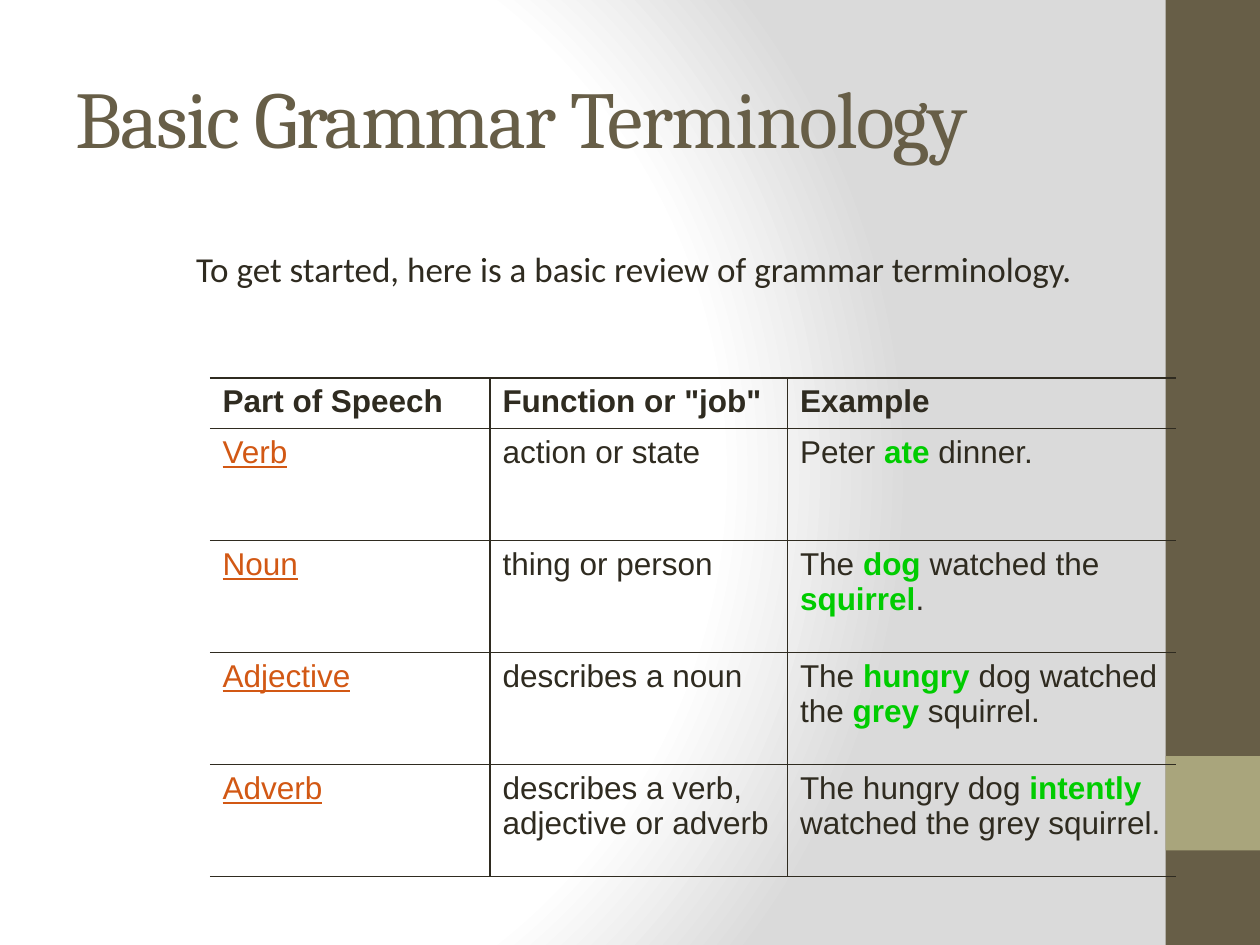
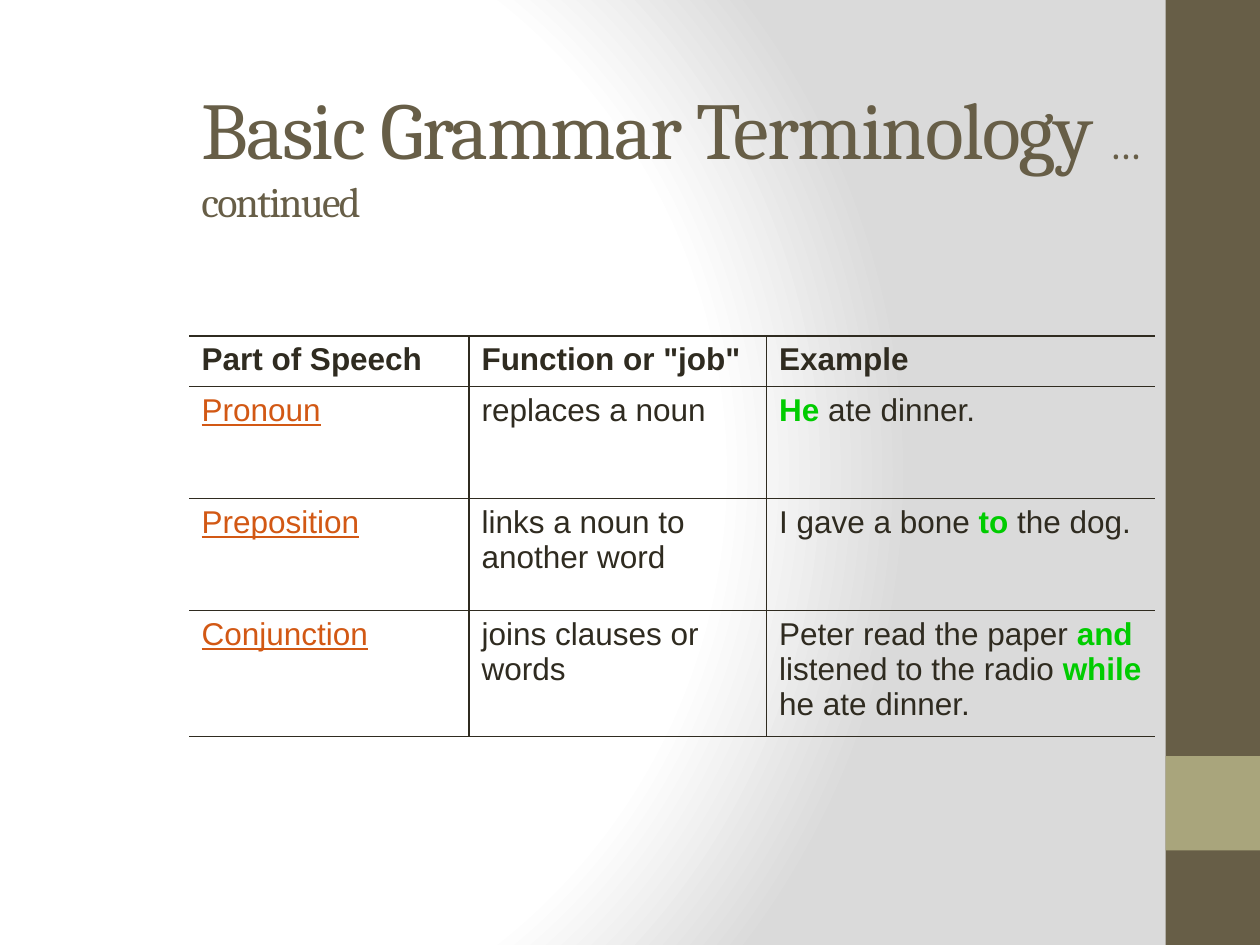
from lxml import etree
from pptx import Presentation
from pptx.dml.color import RGBColor
from pptx.enum import shapes, text
from pptx.oxml.ns import qn
from pptx.util import Pt

WHITE = RGBColor(0xFF, 0xFF, 0xFF)
GREY = RGBColor(0xDA, 0xDA, 0xDA)
BROWN = RGBColor(0x67, 0x5E, 0x47)
OLIVE = RGBColor(0xA9, 0xA5, 0x7C)
INK = RGBColor(0x2F, 0x2B, 0x20)
ORANGE = RGBColor(0xD2, 0x58, 0x14)
GREEN = RGBColor(0x00, 0xCC, 0x00)

SLIDE_W, SLIDE_H = 720, 540
BAND_W = 54
COL_WIDTHS = (160, 170, 222)
HEADER_H = 28.8
HEADERS = ("Part of Speech", "Function or \"job\"", "Example")

# Rows: part of speech, function, example (*marked* words stand out), height
FIRST_PARTS = [
    ("Verb", "action or state", "Peter *ate* dinner.", 64),
    ("Noun", "thing or person", "The *dog* watched the *squirrel*.", 64),
    ("Adjective", "describes a noun",
     "The *hungry* dog watched the *grey* squirrel.", 64),
    ("Adverb", "describes a verb, adjective or adverb",
     "The hungry dog *intently* watched the grey squirrel.", 64),
]
MORE_PARTS = [
    ("Pronoun", "replaces a noun", "*He* ate dinner.", 64),
    ("Preposition", "links a noun to another word",
     "I gave a bone *to* the dog.", 64),
    ("Conjunction", "joins clauses or words",
     "Peter read the paper *and* listened to the radio *while* he ate dinner.",
     72),
]


def add_run(p, words, font, size, color, bold=False, underline=False):
    r = p.add_run()
    r.text = words
    r.font.name, r.font.size = font, Pt(size)
    r.font.color.rgb = color
    r.font.bold, r.font.underline = bold, underline
    return r


def add_text_box(s, left, top, width, height, anchor):
    tf = s.shapes.add_textbox(Pt(left), Pt(top), Pt(width), Pt(height)).text_frame
    tf.word_wrap = True
    tf.vertical_anchor = anchor
    return tf.paragraphs[0]


def set_background(s):
    """Radial fade, white at the left to grey at the right."""
    s.background.fill.gradient()
    grad = s.background._cSld.find(".//" + qn("a:gradFill"))
    for child in list(grad):
        grad.remove(child)
    stops = etree.SubElement(grad, qn("a:gsLst"))
    for pos, color in ((0, WHITE), (75, WHITE), (100, GREY)):
        stop = etree.SubElement(stops, qn("a:gs"), pos=str(pos * 1000))
        etree.SubElement(stop, qn("a:srgbClr"), val=str(color))
    circle = etree.SubElement(grad, qn("a:path"), {"path": "circle"})
    etree.SubElement(circle, qn("a:fillToRect"),
                     l="20000", t="50000", r="100000", b="50000")


def add_side_band(s, left, top, width, height):
    """Brown band with a square olive block near its foot."""
    for y, h, color in ((0, height, BROWN), (height * 0.8, width, OLIVE)):
        sp = s.shapes.add_shape(shapes.MSO_SHAPE.RECTANGLE,
                                Pt(left), Pt(top + y), Pt(width), Pt(h))
        sp.shadow.inherit = False
        sp.fill.solid()
        sp.fill.fore_color.rgb = color
        sp.line.fill.background()


def add_title(s, box, parts):
    p = add_text_box(s, *box, text.MSO_ANCHOR.MIDDLE)
    for words, size in parts:
        r = add_run(p, words, "Cambria", size, BROWN)
        r.font._element.set("spc", "-100")


def add_intro(s, box, words):
    p = add_text_box(s, *box, text.MSO_ANCHOR.TOP)
    p._p.get_or_add_pPr().set("marL", str(Pt(27)))
    add_run(p, words, "Calibri", 20, INK)


def set_borders(cell, hidden):
    """Rule every side of a cell except the hidden one."""
    tcPr = cell._tc.get_or_add_tcPr()
    for i, side in enumerate("LRTB"):
        ln = etree.Element(qn("a:ln" + side), w=str(Pt(1)))
        if side == hidden:
            etree.SubElement(ln, qn("a:noFill"))
        else:
            fill = etree.SubElement(ln, qn("a:solidFill"))
            etree.SubElement(fill, qn("a:srgbClr"), val=str(INK))
        tcPr.insert(i, ln)


def fill_cell(cell, words, row, col):
    cell.fill.background()
    set_borders(cell, {0: "L", 2: "R"}.get(col))
    p = cell.text_frame.paragraphs[0]
    if row == 0:
        add_run(p, words, "Arial", 18, INK, bold=True)
    elif col == 0:
        add_run(p, words, "Arial", 18, ORANGE, underline=True)
    else:
        for i, piece in enumerate(words.split("*")):
            marked = i % 2 == 1
            if piece:
                add_run(p, piece, "Arial", 18, GREEN if marked else INK, marked)


def add_grammar_table(s, left, top, parts):
    heights = [HEADER_H] + [part[-1] for part in parts]
    rows = [HEADERS] + [part[:-1] for part in parts]
    table = s.shapes.add_table(len(rows), len(COL_WIDTHS), Pt(left), Pt(top),
                               Pt(sum(COL_WIDTHS)), Pt(sum(heights))).table
    table.first_row = table.horz_banding = False
    for column, width in zip(table.columns, COL_WIDTHS):
        column.width = Pt(width)
    for i, (row, height) in enumerate(zip(rows, heights)):
        table.rows[i].height = Pt(height)
        for j, words in enumerate(row):
            fill_cell(table.cell(i, j), words, i, j)


def add_grammar_slide(prs, title_box, title, table_at, parts):
    s = prs.slides.add_slide(prs.slide_layouts[6])
    set_background(s)
    add_side_band(s, SLIDE_W - BAND_W, 0, BAND_W, SLIDE_H)
    add_title(s, title_box, title)
    add_grammar_table(s, *table_at, parts)
    return s


def main():
    prs = Presentation()
    prs.slide_width, prs.slide_height = Pt(SLIDE_W), Pt(SLIDE_H)

    # First four parts of speech
    s = add_grammar_slide(prs, (36, 21.6, 600, 90),
                          [("Basic Grammar Terminology", 46)],
                          (120, 216), FIRST_PARTS)
    add_intro(s, (78, 138, 564, 90),
              "To get started, here is a basic review of grammar terminology.")

    # Remaining parts of speech
    add_grammar_slide(prs, (108, 24, 576, 126),
                      [("Basic Grammar Terminology ", 46), ("…continued", 24)],
                      (108, 192), MORE_PARTS)
    prs.save("out.pptx")


if __name__ == "__main__":
    main()
